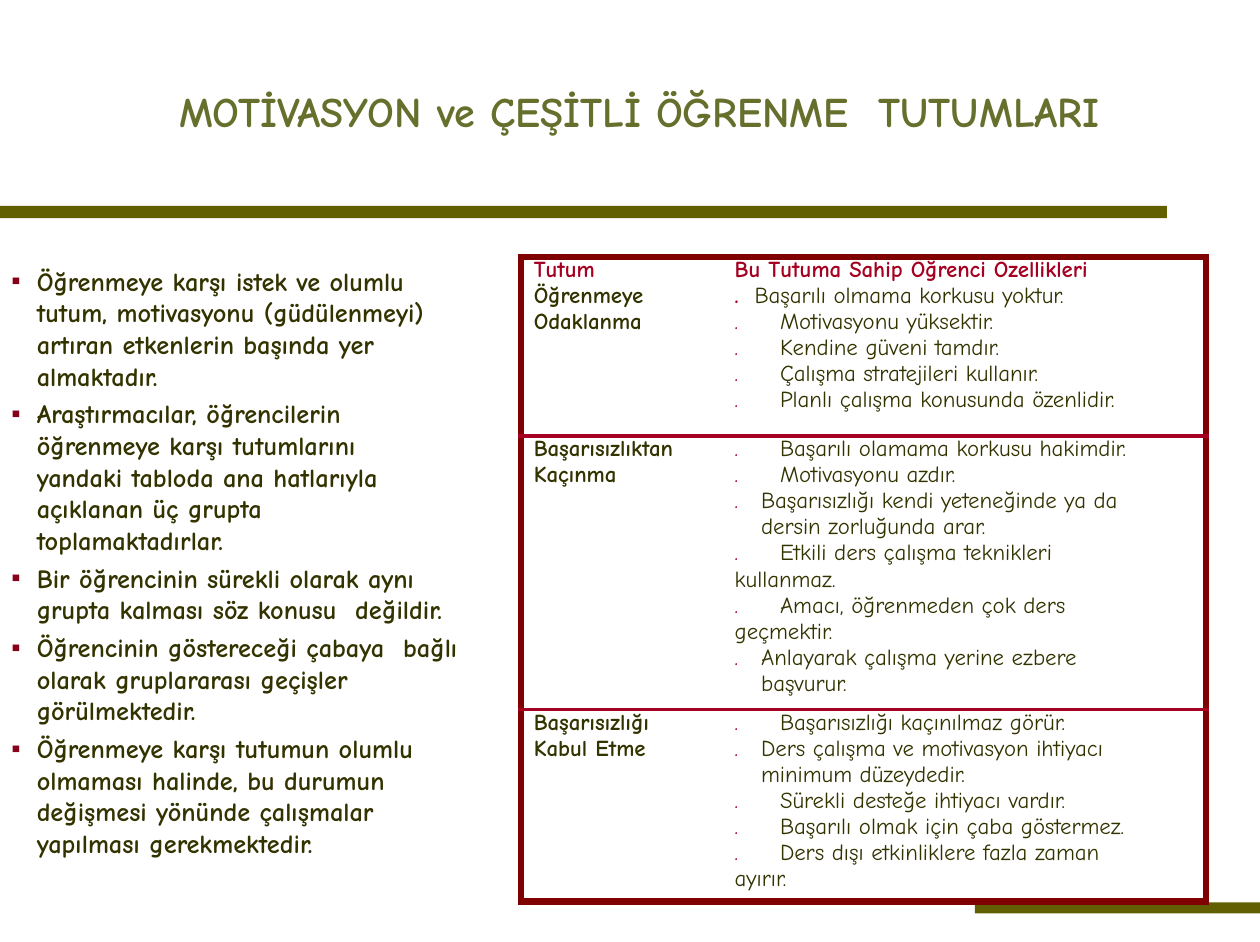
"""Build a slide on motivation and learning attitudes with a bullet list and a table."""
from lxml import etree
from pptx import Presentation
from pptx.dml.color import RGBColor
from pptx.enum import shapes, text
from pptx.oxml import ns
from pptx.util import Cm, Pt

OLIVE, DARK, RED, MAROON = "615F01", "333300", "A50021", "800101"


def add_span(para, wording, size, colour, bold):
    span = para.add_run()
    span.text = wording
    values = {"name": "Comic Neue", "size": Pt(size), "bold": bold}
    for name, value in values.items():
        setattr(span.font, name, value)
    span.font.color.rgb = RGBColor.from_string(colour)


def add_element(parent, tag, **attributes):
    element = etree.SubElement(parent, ns.qn(tag))
    for name, value in attributes.items():
        element.set(name, str(value))
    return element


deck = Presentation()
deck.slide_width, deck.slide_height = Pt(718), Pt(537)
page = deck.slides.add_slide(deck.slide_layouts[5])

for left, top, width, height in [(0, 4.14, 23.46, 0.25), (19.6, 18.15, 5.73, 0.22)]:
    bar = page.shapes.add_shape(shapes.MSO_SHAPE.RECTANGLE, Cm(left), Cm(top), Cm(width), Cm(height))
    bar.shadow.inherit = False
    bar.fill.solid()
    bar.fill.fore_color.rgb = RGBColor.from_string(OLIVE)
    bar.line.fill.background()

title = page.shapes.title
title.left, title.top, title.width, title.height = Cm(2.49), Cm(0.66), Cm(20.37), Cm(3.1)
title_format = {"margin_left": Cm(1.12), "margin_top": Cm(1.05), "margin_right": 0, "margin_bottom": 0,
                "vertical_anchor": text.MSO_ANCHOR.TOP, "word_wrap": True,
                "auto_size": text.MSO_AUTO_SIZE.NONE}
for name, value in title_format.items():
    setattr(title.text_frame, name, value)
title_para = title.text_frame.paragraphs[0]
title_para.alignment = text.PP_ALIGN.LEFT
add_span(title_para, "MOTİVASYON ve ÇEŞİTLİ ÖĞRENME  TUTUMLARI", 24, "676F2D", True)

attitudes = [
    ([("Tutum ", RED), ("Öğrenmeye Odaklanma", DARK)],
     [("first", "Başarılı olmama korkusu yoktur."),
      ("tab", "Motivasyonu yüksektir."),
      ("tab", "Kendine güveni tamdır."),
      ("tab", "Çalışma stratejileri kullanır."),
      ("tab", "Planlı çalışma konusunda özenlidir.")]),
    ([("Başarısızlıktan Kaçınma", DARK)],
     [("tab", "Başarılı olamama korkusu hakimdir."),
      ("tab", "Motivasyonu azdır."),
      ("hang", "Başarısızlığı kendi yeteneğinde ya da dersin zorluğunda arar."),
      ("tab", "Etkili ders çalışma teknikleri kullanmaz."),
      ("tab", "Amacı, öğrenmeden çok ders geçmektir."),
      ("hang", "Anlayarak çalışma yerine ezbere başvurur.")]),
    ([("Başarısızlığı Kabul Etme", DARK)],
     [("tab", "Başarısızlığı kaçınılmaz görür."),
      ("hang", "Ders çalışma ve motivasyon ihtiyacı minimum düzeydedir."),
      ("tab", "Sürekli desteğe ihtiyacı vardır."),
      ("tab", "Başarılı olmak için çaba göstermez."),
      ("tab", "Ders dışı etkinliklere fazla zaman ayırır.")]),
]
indents = {"first": (0.78, -0.4), "tab": (0.38, 0), "hang": (0.91, -0.53)}
row_heights = [3.61, 5.5, 3.86]
column_widths = [3.91, 9.86]

frame = page.shapes.add_table(3, 2, Cm(10.48), Cm(5.16), Cm(sum(column_widths)), Cm(sum(row_heights)))
table = frame.table
table.first_row = table.horz_banding = False
style = table._tbl.tblPr.find(ns.qn("a:tableStyleId"))
style.text = "{2D5ABB26-0587-4C30-8999-92F81FD0307C}"
for column, width in zip(table.columns, column_widths):
    column.width = Cm(width)

for index, (heading, traits) in enumerate(attitudes):
    table.rows[index].height = Cm(row_heights[index])
    name_cell, trait_cell = table.cell(index, 0), table.cell(index, 1)

    for cell, left, right, side in [(name_cell, 0.25, 0.5, "L"), (trait_cell, 0, 1.4, "R")]:
        margins = {"margin_left": Cm(left), "margin_right": Cm(right), "margin_top": 0, "margin_bottom": 0}
        for name, value in margins.items():
            setattr(cell, name, value)
        edges = [(side, True), ("T", index == 0), ("B", index == 2)]
        for edge, outer in edges:
            line = add_element(cell._tc.get_or_add_tcPr(), f"a:ln{edge}", w=Pt(4 if outer else 2.25))
            fill = add_element(line, "a:solidFill")
            add_element(fill, "a:srgbClr", val=MAROON if outer else "A50122")
        cell.fill.background()

    for wording, colour in heading:
        add_span(name_cell.text_frame.paragraphs[0], wording, 13, colour, True)

    para = trait_cell.text_frame.paragraphs[0]
    if index == 0:
        para._p.get_or_add_pPr().set("marL", str(Cm(0.38)))
        add_span(para, "Bu Tutuma Sahip Öğrenci Özellikleri", 13, RED, True)
        para = trait_cell.text_frame.add_paragraph()
    for number, (kind, trait) in enumerate(traits):
        if number:
            para = trait_cell.text_frame.add_paragraph()
        margin, indent = indents[kind]
        properties = para._p.get_or_add_pPr()
        properties.set("marL", str(Cm(margin)))
        if indent:
            properties.set("indent", str(Cm(indent)))
        tabs = add_element(properties, "a:tabLst")
        add_element(tabs, "a:tab", pos=Cm(0.78 if kind == "first" else 0.91), algn="l")
        add_span(para, ".\t", 13, RED, kind == "first")
        add_span(para, trait, 13, DARK, False)

points = [
    ("Öğrenmeye karşı istek ve olumlu tutum, motivasyonu (güdülenmeyi) artıran etkenlerin "
     "başında yer almaktadır.", 0),
    ("Araştırmacılar, öğrencilerin öğrenmeye karşı tutumlarını yandaki tabloda ana hatlarıyla "
     "açıklanan üç grupta toplamaktadırlar.", 1.3),
    ("Bir öğrencinin sürekli olarak aynı grupta kalması söz konusu  değildir.", 0),
    ("Öğrencinin göstereceği çabaya  bağlı olarak gruplararası geçişler görülmektedir.", 0),
    ("Öğrenmeye karşı tutumun olumlu olmaması halinde, bu durumun değişmesi yönünde "
     "çalışmalar yapılması gerekmektedir.", 0),
]
box = page.shapes.add_textbox(Cm(0.18), Cm(5.33), Cm(9.14), Cm(12.62)).text_frame
box_format = {"margin_left": 0, "margin_top": 0, "margin_right": 0, "margin_bottom": 0, "word_wrap": True}
for name, value in box_format.items():
    setattr(box, name, value)
for number, (point, right_margin) in enumerate(points):
    para = box.add_paragraph() if number else box.paragraphs[0]
    properties = para._p.get_or_add_pPr()
    for name, length in {"marL": 0.56, "marR": right_margin, "indent": -0.51}.items():
        properties.set(name, str(Cm(length)))
    bullet_colour = add_element(properties, "a:buClr")
    add_element(bullet_colour, "a:srgbClr", val="86001A")
    add_element(properties, "a:buFont", typeface="Arial")
    add_element(properties, "a:buChar", char="▪")
    if number:
        para.space_before = Pt(3.6)
    add_span(para, point, 15, DARK, True)

deck.save("out.pptx")
